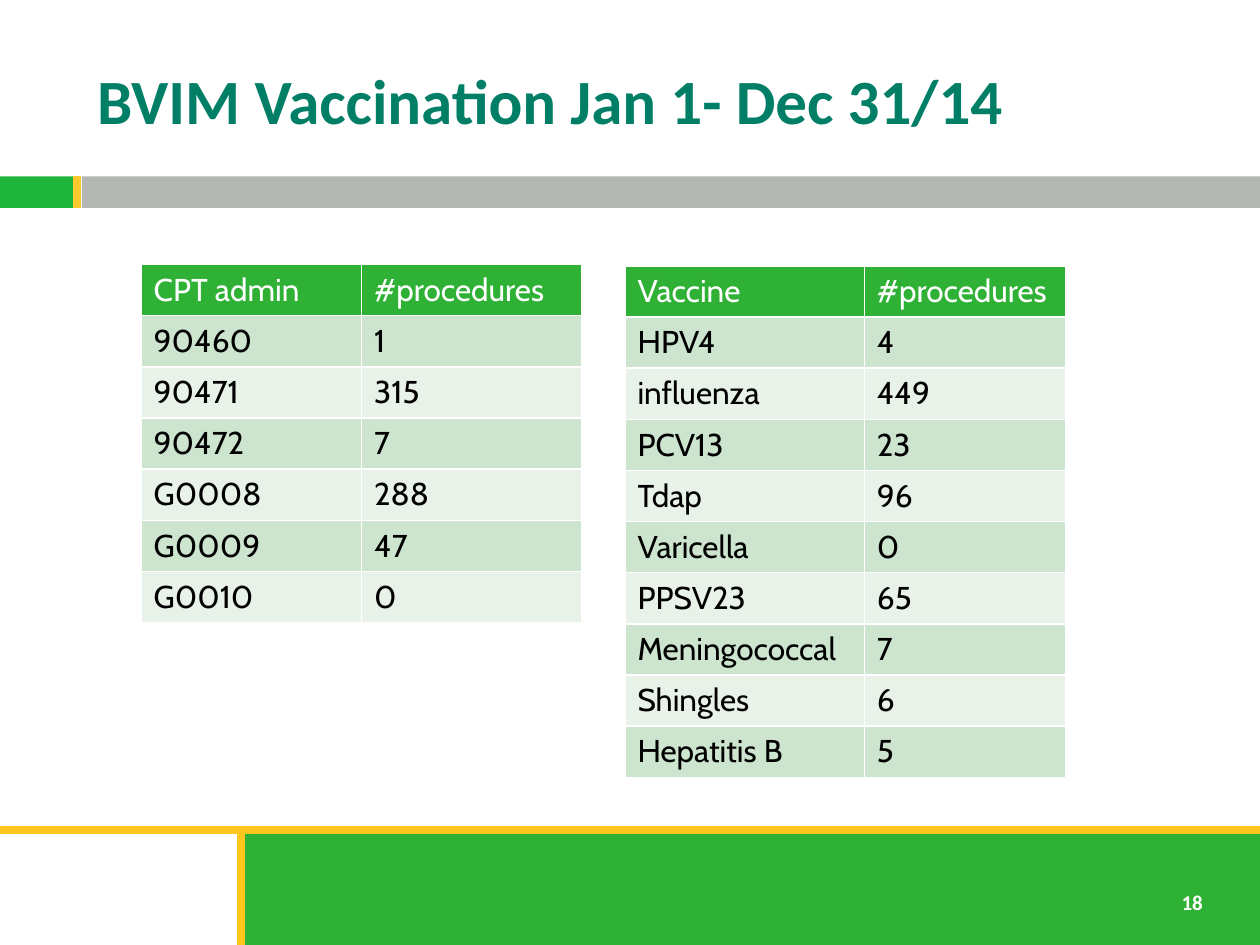
from dataclasses import dataclass

from lxml import etree
from pptx import Presentation
from pptx import util as u
from pptx.dml.color import RGBColor
from pptx.enum import shapes, text
from pptx.oxml.ns import qn

WIDTH, HEIGHT = 10, 7.5
GREEN, BRIGHT_GREEN, TEAL, GREY = "2EB135", "1EB53A", "007E66", "B5B7B4"
YELLOW, AMBER, WHITE, BLACK = "FFC61E", "FFC82E", "FFFFFF", "000000"
BANDS = ("CDE4CE", "E8F2E8")
ROW_HEIGHT = 0.406

# Grid lines of the master decoration, in inches
BAND_TOP, BAND_BOTTOM, BAND_SPLIT = 1.4, 1.65, 0.61
FOOTER_TOP, FOOTER_LEFT = 6.59, 1.91


@dataclass
class Bar:
    left: float
    top: float
    right: float
    bottom: float
    color: str


@dataclass
class Rule:
    start: tuple[float, float]
    end: tuple[float, float]
    color: str


@dataclass
class Counts:
    left: float
    top: float
    columns: tuple[float, float]
    rows: list[tuple[str, str]]


BARS = [
    Bar(0, 1.35, WIDTH, 1.7, WHITE),
    Bar(0, BAND_TOP, 0.58, BAND_BOTTOM, BRIGHT_GREEN),
    Bar(0.65, BAND_TOP, WIDTH, BAND_BOTTOM, GREY),
    Bar(FOOTER_LEFT, FOOTER_TOP, WIDTH, HEIGHT, GREEN),
]
RULES = [
    Rule((0, FOOTER_TOP), (WIDTH, FOOTER_TOP), YELLOW),
    Rule((FOOTER_LEFT, FOOTER_TOP), (FOOTER_LEFT, HEIGHT), YELLOW),
    Rule((BAND_SPLIT, BAND_TOP), (BAND_SPLIT, BAND_BOTTOM), AMBER),
]
TABLES = [
    Counts(1.12, 2.1, (1.75, 1.75), [
        ("CPT admin", "#procedures"),
        ("90460", "1"),
        ("90471", "315"),
        ("90472", "7"),
        ("G0008", "288"),
        ("G0009", "47"),
        ("G0010", "0"),
    ]),
    Counts(4.96, 2.11, (1.9, 1.6), [
        ("Vaccine", "#procedures"),
        ("HPV4", "4"),
        ("influenza", "449"),
        ("PCV13", "23"),
        ("Tdap", "96"),
        ("Varicella", "0"),
        ("PPSV23", "65"),
        ("Meningococcal", "7"),
        ("Shingles", "6"),
        ("Hepatitis B", "5"),
    ]),
]


def paint(target, color: str) -> None:
    """Give a fill format a solid colour."""
    target.solid()
    target.fore_color.rgb = RGBColor.from_string(color)


def write(frame, words: str, *, size: float, color: str,
          font: str = "Calibri", bold: bool = False) -> None:
    paragraph = frame.paragraphs[0]
    paragraph.alignment = text.PP_ALIGN.LEFT
    run = paragraph.add_run()
    run.text = words
    run.font.name, run.font.size, run.font.bold = font, u.Pt(size), bold
    paint(run.font.fill, color)


def draw_bar(slide, bar: Bar) -> None:
    box = map(u.Inches, (bar.left, bar.top, bar.right - bar.left, bar.bottom - bar.top))
    shape = slide.shapes.add_shape(shapes.MSO_SHAPE.RECTANGLE, *box)
    shape.shadow.inherit = False
    paint(shape.fill, bar.color)
    shape.line.fill.background()


def draw_rule(slide, rule: Rule) -> None:
    ends = map(u.Inches, rule.start + rule.end)
    line = slide.shapes.add_connector(shapes.MSO_CONNECTOR.STRAIGHT, *ends)
    line.line.width = u.Pt(4.5)
    paint(line.line.fill, rule.color)
    etree.SubElement(line._element.spPr, qn("a:effectLst"))


def draw_counts(slide, counts: Counts) -> None:
    total = len(counts.rows)
    box = map(u.Inches, (counts.left, counts.top, sum(counts.columns), total * ROW_HEIGHT))
    table = slide.shapes.add_table(total, len(counts.columns), *box).table
    for column, width in zip(table.columns, counts.columns):
        column.width = u.Inches(width)
    for r, row in enumerate(counts.rows):
        for c, words in enumerate(row):
            cell = table.cell(r, c)
            paint(cell.fill, BANDS[(r - 1) % 2] if r else GREEN)
            write(cell.text_frame, words, size=18, font="Cabin",
                  color=BLACK if r else WHITE)


def main() -> None:
    deck = Presentation()
    deck.slide_width, deck.slide_height = u.Inches(WIDTH), u.Inches(HEIGHT)
    slide = deck.slides.add_slide(deck.slide_layouts[5])

    # Bands and rules
    for bar in BARS:
        draw_bar(slide, bar)
    for rule in RULES:
        draw_rule(slide, rule)

    # Slide number
    number = slide.shapes.add_textbox(*map(u.Inches, (9.28, 7.01, 0.4, 0.3))).text_frame
    number.word_wrap = False
    number.auto_size = text.MSO_AUTO_SIZE.SHAPE_TO_FIT_TEXT
    write(number, "18", size=12, color=WHITE, bold=True)

    # Title
    title = slide.shapes.title
    title.left, title.top, title.width, title.height = map(u.Inches, (0.67, 0.25, 8.92, 1.08))
    title.text_frame.vertical_anchor = text.MSO_ANCHOR.MIDDLE
    write(title.text_frame, "BVIM Vaccination Jan 1- Dec 31/14",
          size=36, color=TEAL, bold=True)

    # Procedure counts
    for counts in TABLES:
        draw_counts(slide, counts)

    deck.save("out.pptx")


if __name__ == "__main__":
    main()
